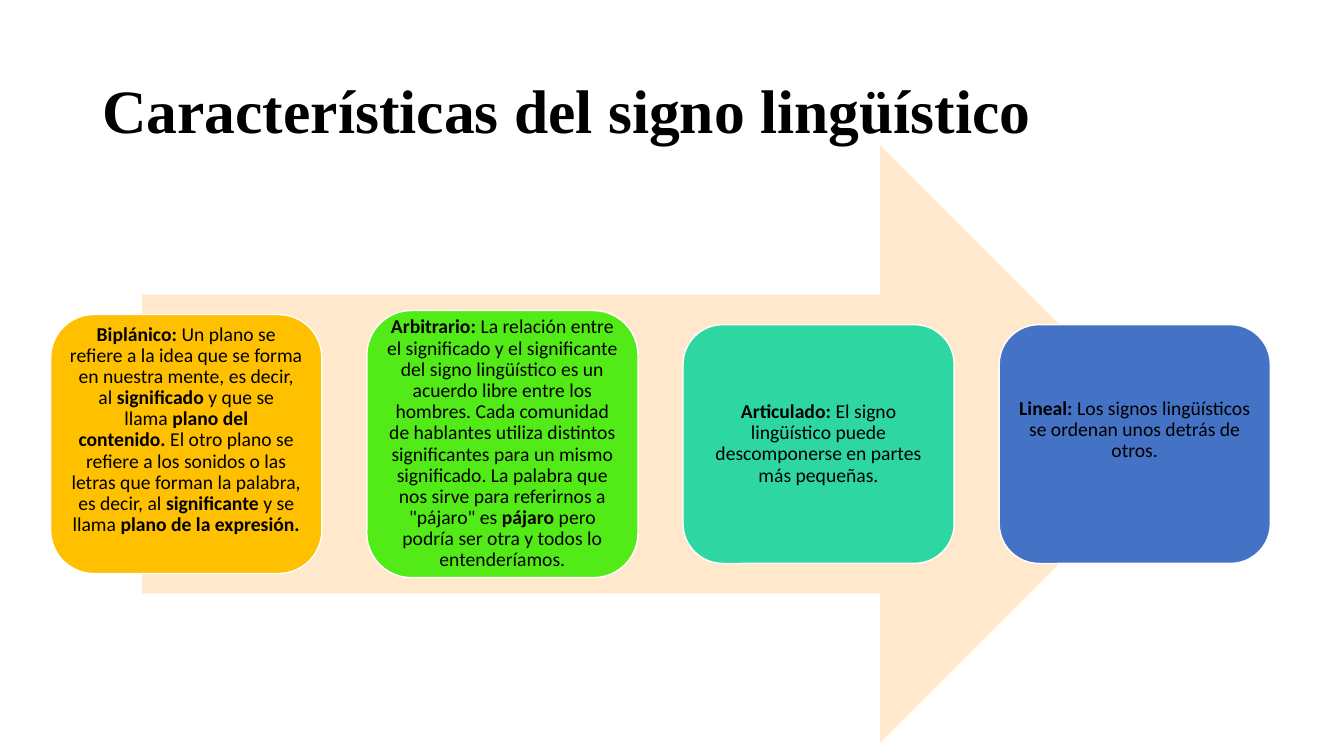
from pptx import Presentation
from pptx.dml.color import RGBColor
from pptx.enum.shapes import MSO_SHAPE
from pptx.enum.text import MSO_ANCHOR, PP_ALIGN
from pptx.util import Pt

NBSP = chr(160)
BLACK = "000000"
INSET = 4.4
RAISED = 20  # extra bottom inset that lifts the text of a card

# Fill, height, extra bottom inset, then text pieces that alternate bold and regular
TRAITS = [
    ("FFC000", 185, RAISED, [
        "Biplánico:",
        "Un plano se refiere a la idea que se forma en nuestra mente, es decir, al",
        "significado", "y que se llama", "plano del contenido.",
        "El otro plano se refiere a los sonidos o las letras que forman la palabra, es decir, al",
        "significante", "y se llama", "plano de la expresión."]),
    ("53EB17", 190.8, 0, [
        "Arbitrario:",
        "La relación entre el significado y el significante del signo lingüístico es un "
        "acuerdo libre entre los hombres. Cada comunidad de hablantes utiliza distintos "
        "significantes para un mismo significado. La palabra que nos sirve para "
        'referirnos a "pájaro" es',
        "pájaro", "pero podría ser otra y todos lo entenderíamos."]),
    ("2ED7A1", 170.6, 0, [
        "Articulado:",
        "El signo lingüístico puede descomponerse en partes más pequeñas."]),
    ("4472C4", 170.6, RAISED, [
        "Lineal:",
        "Los signos lingüísticos se ordenan unos detrás de otros."]),
]


def color(value):
    return RGBColor.from_string(value)


def write(frame, pieces, *, size, font, align, insets):
    """Fill the frame with one paragraph of alternating bold and regular pieces."""
    frame.word_wrap = True
    frame.vertical_anchor = MSO_ANCHOR.MIDDLE
    (frame.margin_left, frame.margin_top,
     frame.margin_right, frame.margin_bottom) = [Pt(inset) for inset in insets]
    paragraph = frame.paragraphs[0]
    paragraph.alignment = align
    paragraph.line_spacing = 0.9
    for index, piece in enumerate(pieces):
        bold = index % 2 == 0
        run = paragraph.add_run()
        if bold:
            run.text = piece
        else:
            run.text = NBSP + piece + (NBSP if index < len(pieces) - 1 else "")
        run.font.size = Pt(size)
        run.font.name = font
        run.font.bold = bold
        run.font.color.rgb = color(BLACK)


def add_block(slide, kind, box, fill, outline=None):
    block = slide.shapes.add_shape(kind, *[Pt(length) for length in box])
    block.shadow.inherit = False
    block.fill.solid()
    block.fill.fore_color.rgb = color(fill)
    if outline:
        block.line.color.rgb = color(outline)
        block.line.width = Pt(1)
    else:
        block.line.fill.background()
    return block


def add_title(slide, box):
    title = slide.shapes.add_textbox(*[Pt(length) for length in box])
    write(title.text_frame, ["Características del signo lingüístico"], size=44,
          font="Times New Roman", align=PP_ALIGN.LEFT, insets=(7.2, 3.6, 7.2, 3.6))


def add_process(slide, box):
    """Draw the arrow, and the row of cards centred on it, inside the box."""
    left, top, width, height = box
    arrow_width = 0.85 * width
    add_block(slide, MSO_SHAPE.RIGHT_ARROW,
              (left + (width - arrow_width) / 2, top, arrow_width, height), "FFE8CC")
    card_width = 193.7
    pitch = (width - card_width) / (len(TRAITS) - 1)
    for index, (fill, card_height, raised, pieces) in enumerate(TRAITS):
        card = add_block(slide, MSO_SHAPE.ROUNDED_RECTANGLE,
                         (left + index * pitch, top + (height - card_height) / 2,
                          card_width, card_height), fill, outline="FFFFFF")
        write(card.text_frame, pieces, size=14, font="Calibri", align=PP_ALIGN.CENTER,
              insets=(INSET, INSET, INSET, INSET + raised))


def main():
    deck = Presentation()
    deck.slide_width, deck.slide_height = Pt(960), Pt(540)
    slide = deck.slides.add_slide(deck.slide_layouts[6])
    add_title(slide, (66, 28.8, 828, 104.4))
    add_process(slide, (36.2, 103.7, 871.2, 427))
    deck.save("out.pptx")


if __name__ == "__main__":
    main()
